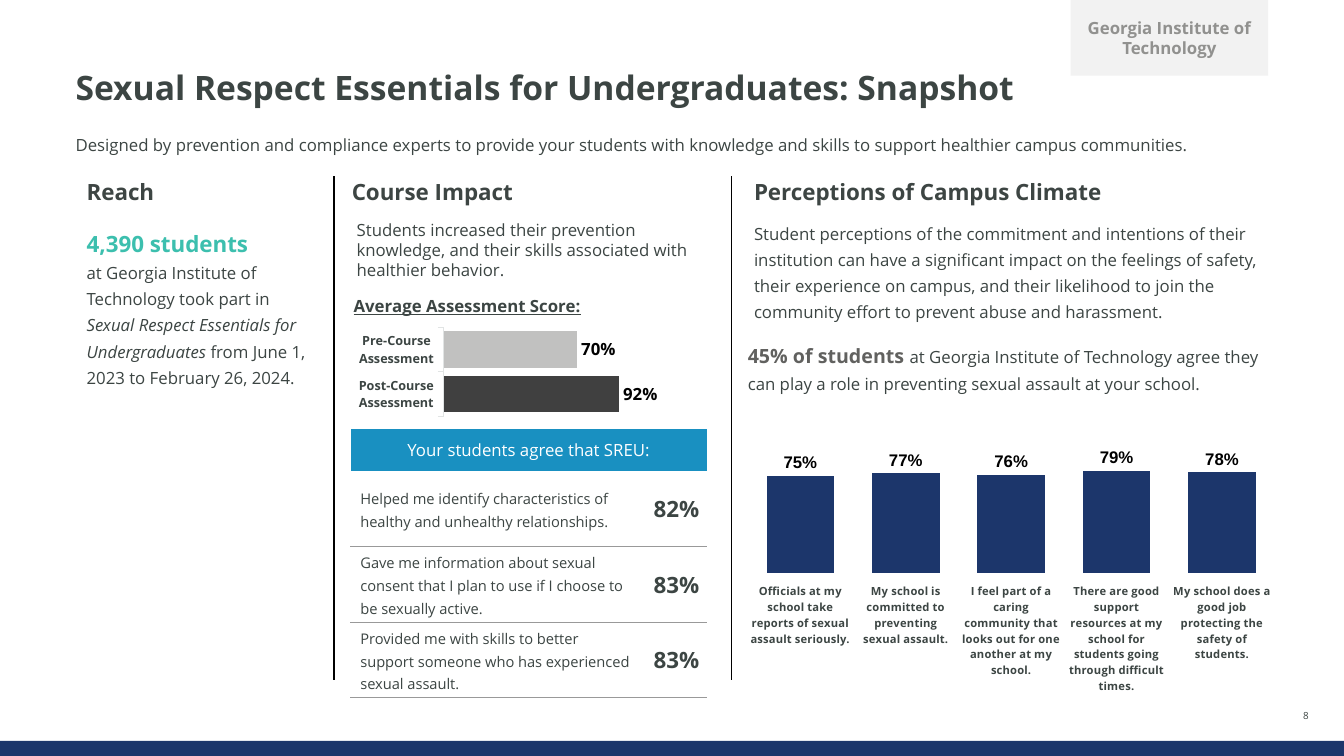
from dataclasses import dataclass

from lxml.etree import SubElement
from pptx import Presentation
from pptx.chart.data import CategoryChartData
from pptx.dml.color import RGBColor
from pptx.enum.chart import XL_CHART_TYPE as ChartType, XL_LABEL_POSITION as LabelPosition
from pptx.enum.shapes import MSO_CONNECTOR as Connector, MSO_SHAPE as Shape
from pptx.enum.text import MSO_ANCHOR as Anchor, PP_ALIGN as Align
from pptx.oxml import parse_xml
from pptx.oxml.ns import nsdecls, qn
from pptx.util import Pt


@dataclass(frozen=True)
class Theme:
    font: str = "Open Sans"
    chart_font: str = "Arial"
    ink: str = "3C4543"
    heading_ink: str = "3D4543"
    navy: str = "1C366B"
    teal: str = "3CBFAE"
    blue: str = "1990C1"
    stat_grey: str = "61615F"
    badge_ink: str = "91918F"
    badge_fill: str = "F2F2F2"
    rule_grey: str = "999999"
    axis_grey: str = "E1E4E4"
    pre_bar: str = "C1C1C0"
    post_bar: str = "404040"
    black: str = "000000"
    white: str = "FFFFFF"
    title: float = 24
    heading: float = 16
    stat: float = 14
    body: float = 12
    table: float = 10.5
    chart: float = 10
    score_axis: float = 9
    climate_axis: float = 8
    page: float = 7


THEME = Theme()

COURSE = "Sexual Respect Essentials for Undergraduates"
STATEMENTS = [
    ("Helped me identify characteristics of healthy and unhealthy relationships.", "82%"),
    ("Gave me information about sexual consent that I plan to use if I choose to "
     "be sexually active.", "83%"),
    ("Provided me with skills to better support someone who has experienced "
     "sexual assault.", "83%"),
]
CLIMATE = {
    "Officials at my school take reports of sexual assault seriously.": 0.75,
    "My school is committed to preventing sexual assault.": 0.77,
    "I feel part of a caring community that looks out for one another at my school.": 0.76,
    "There are good support resources at my school for students going through "
    "difficult times.": 0.79,
    "My school does a good job protecting the safety of students.": 0.78,
}
SCORES = {"Post-Course Assessment": 0.92, "Pre-Course Assessment": 0.7}


def assign(target, **values):
    for name, value in values.items():
        setattr(target, name, value)


def style_font(font, size=THEME.body, color=THEME.ink, name=THEME.font, **extras):
    assign(font, size=Pt(size), name=name, **extras)
    font.color.rgb = RGBColor.from_string(color)


def fill_solid(fill, color):
    fill.solid()
    fill.fore_color.rgb = RGBColor.from_string(color)


def write(frame, *paragraphs, align=Align.LEFT, spacing=None):
    """Fill a text frame; each paragraph is a list of (text, font values) runs."""
    for index, runs in enumerate(paragraphs):
        paragraph = frame.add_paragraph() if index else frame.paragraphs[0]
        assign(paragraph, alignment=align, line_spacing=spacing)
        for text, values in runs:
            run = paragraph.add_run()
            run.text = text
            style_font(run.font, **values)


def set_margins(target, left=0, top=0, right=0, bottom=0):
    assign(target, margin_left=Pt(left), margin_top=Pt(top),
           margin_right=Pt(right), margin_bottom=Pt(bottom))


def add_text(slide, box, *paragraphs, anchor=Anchor.TOP, margins=(0, 0, 0, 0), **layout):
    frame = slide.shapes.add_textbox(*map(Pt, box)).text_frame
    assign(frame, word_wrap=True, vertical_anchor=anchor)
    set_margins(frame, *margins)
    write(frame, *paragraphs, **layout)


def add_block(slide, box, color):
    block = slide.shapes.add_shape(Shape.RECTANGLE, *map(Pt, box))
    block.shadow.inherit = False
    fill_solid(block.fill, color)
    block.line.fill.background()
    return block


def add_divider(slide, x, top, bottom):
    divider = slide.shapes.add_connector(Connector.STRAIGHT, *map(Pt, (x, top, x, bottom)))
    divider.line.width = Pt(1)
    divider.line.color.rgb = RGBColor.from_string(THEME.black)
    SubElement(divider._element.spPr, qn("a:effectLst"))


def set_borders(cell, colors):
    """Draw the edges named in colors (L, R, T, B) and clear the others."""
    properties = cell._tc.get_or_add_tcPr()
    for index, edge in enumerate("LRTB"):
        color = colors.get(edge)
        paint = (f'<a:solidFill><a:srgbClr val="{color}"/></a:solidFill>'
                 if color else "<a:noFill/>")
        properties.insert(index, parse_xml(
            f'<a:ln{edge} {nsdecls("a")} w="{Pt(1)}">{paint}</a:ln{edge}>'))


def add_agreement_table(slide, box):
    table = slide.shapes.add_table(len(STATEMENTS) + 1, 2, *map(Pt, box)).table
    assign(table, first_row=False, horz_banding=False)
    for column, width in zip(table.columns, (203.8, 51.1)):
        column.width = Pt(width)
    for index, row in enumerate(table.rows):
        row.height = Pt(54 if index else 30.4)

    header = table.cell(0, 0)
    header.merge(table.cell(0, 1))
    header.vertical_anchor = Anchor.MIDDLE
    set_margins(header)
    fill_solid(header.fill, THEME.blue)
    set_borders(header, dict.fromkeys("LRT", THEME.white))
    write(header.text_frame, [("Your students agree that SREU:", {"color": THEME.white})],
          align=Align.CENTER)

    styles = [({"size": THEME.table}, Align.LEFT, 1.14),
              ({"size": THEME.heading, "bold": True}, Align.CENTER, None)]
    for row, texts in enumerate(STATEMENTS, 1):
        for column, (text, (values, align, spacing)) in enumerate(zip(texts, styles)):
            cell = table.cell(row, column)
            cell.vertical_anchor = Anchor.MIDDLE
            set_margins(cell, left=7.2)
            cell.fill.background()
            set_borders(cell, dict.fromkeys("TB" if row > 1 else "B", THEME.rule_grey))
            write(cell.text_frame, [(text, values)], align=align, spacing=spacing)


def place(element, index, **position):
    """Give a chart part a manual layout, as fractions of the chart."""
    for old in element.findall(qn("c:layout")):
        element.remove(old)
    target = '<c:layoutTarget val="inner"/>' if "w" in position else ""
    modes = "".join(f'<c:{axis}Mode val="edge"/>' for axis in "xy")
    values = "".join(f'<c:{key} val="{value}"/>' for key, value in position.items())
    element.insert(index, parse_xml(
        f'<c:layout {nsdecls("c")}><c:manualLayout>{target}{modes}{values}'
        "</c:manualLayout></c:layout>"))


def add_percent_chart(slide, kind, box, scores, color, plot, gap, top_value,
                      axis_size, label_font):
    data = CategoryChartData(number_format="0%")
    data.categories = list(scores)
    data.add_series("Series 1", list(scores.values()))
    chart = slide.shapes.add_chart(kind, *map(Pt, box), data).chart
    assign(chart, has_legend=False, has_title=False)
    style_font(chart.font, THEME.chart, name=THEME.chart_font)
    place(chart._chartSpace.chart.plotArea, 0, **dict(zip("xywh", plot)))
    assign(chart.value_axis, visible=False, has_major_gridlines=False,
           minimum_scale=0, maximum_scale=top_value)
    style_font(chart.category_axis.tick_labels.font, axis_size, bold=True)

    bars = chart.plots[0]
    assign(bars, gap_width=gap, vary_by_categories=False, has_data_labels=True)
    assign(bars.data_labels, show_value=True, position=LabelPosition.OUTSIDE_END,
           number_format="0%", number_format_is_linked=False)
    style_font(bars.data_labels.font, color=THEME.black, name=label_font, bold=True)
    fill_solid(bars.series[0].format.fill, color)
    return chart


def add_score_chart(slide):
    chart = add_percent_chart(
        slide, ChartType.BAR_CLUSTERED, (250.4, 204.5, 260, 118), SCORES, THEME.pre_bar,
        (0.256, 0.247, 0.629, 0.543), 23, 1.2, THEME.score_axis, THEME.font)
    fill_solid(chart.plots[0].series[0].points[0].format.fill, THEME.post_bar)
    axis_line = chart.category_axis.format.line
    axis_line.width = Pt(0.75)
    axis_line.color.rgb = RGBColor.from_string(THEME.axis_grey)
    title = chart.chart_title
    write(title.text_frame,
          [("Average Assessment Score:", {"bold": True, "underline": True})])
    place(title._element, 1, x=0, y=0.02)


def add_climate_chart(slide):
    chart = add_percent_chart(
        slide, ChartType.COLUMN_CLUSTERED, (521.5, 277.2, 393, 232), CLIMATE, THEME.navy,
        (0.032, 0.171, 0.958, 0.4), 56, 1, THEME.climate_axis, THEME.chart_font)
    chart.value_axis.major_unit = 0.1
    chart.category_axis.format.line.fill.background()


def main():
    deck = Presentation()
    assign(deck, slide_width=Pt(960), slide_height=Pt(540))
    slide = deck.slides.add_slide(deck.slide_layouts[6])

    add_block(slide, (0, 529.2, 960, 10.8), THEME.navy)
    add_text(slide, (54, 51.1, 852, 50.4),
             [(f"{COURSE}: Snapshot", {"size": THEME.title, "bold": True})], spacing=0.9)
    add_text(slide, (914.4, 504.7, 36.7, 10.8), [("8", {"size": THEME.page})],
             anchor=Anchor.BOTTOM, align=Align.CENTER)
    for x in (238.5, 522.5):
        add_divider(slide, x, 126, 486)
    for heading, left in (("Course Impact", 251.3), ("Reach", 61.9),
                          ("Perceptions of Campus Climate", 538.6)):
        add_text(slide, (left, 127.4, 260, 37.4),
                 [(heading, {"size": THEME.heading, "color": THEME.heading_ink,
                             "bold": True})])

    add_text(slide, (61.9, 158.4, 160.6, 195),
             [("4,390 students",
               {"size": THEME.heading, "color": THEME.teal, "bold": True})],
             [("at Georgia Institute of Technology took part in ", {}),
              (f"{COURSE} ", {"italic": True}),
              ("from June 1, 2023 to February 26, 2024.", {})], spacing=1.3)
    add_agreement_table(slide, (250.2, 306, 254.9, 192.4))

    badge = add_block(slide, (764.8, 0, 141, 54), THEME.badge_fill).text_frame
    assign(badge, word_wrap=True, vertical_anchor=Anchor.MIDDLE)
    set_margins(badge, left=7.2, right=7.2)
    write(badge, [("Georgia Institute of Technology",
                   {"color": THEME.badge_ink, "bold": True})], align=Align.CENTER)

    add_text(slide, (534.2, 240.5, 371.5, 44),
             [("45% of students ",
               {"size": THEME.stat, "color": THEME.stat_grey, "bold": True}),
              ("at Georgia Institute of Technology agree they can play a role in "
               "preventing sexual assault at your school.", {})], spacing=1.3)
    add_climate_chart(slide)
    add_text(slide, (54, 91.8, 852, 35.3),
             [("Designed by prevention and compliance experts to provide your students with "
               "knowledge and skills to support healthier campus communities.", {})],
             spacing=1.3)
    add_text(slide, (538.6, 155.3, 371.5, 85.7),
             [("Student perceptions of the commitment and intentions of their institution "
               "can have a significant impact on the feelings of safety, their experience on "
               "campus, and their likelihood to join the community effort to prevent abuse "
               "and harassment.", {})], spacing=1.3)
    add_score_chart(slide)
    add_text(slide, (247.7, 153.4, 260, 51),
             [("Students increased their prevention knowledge, and their skills associated "
               "with healthier behavior.", {})], margins=(7.2, 3.6, 7.2, 3.6))
    deck.save("out.pptx")


if __name__ == "__main__":
    main()
